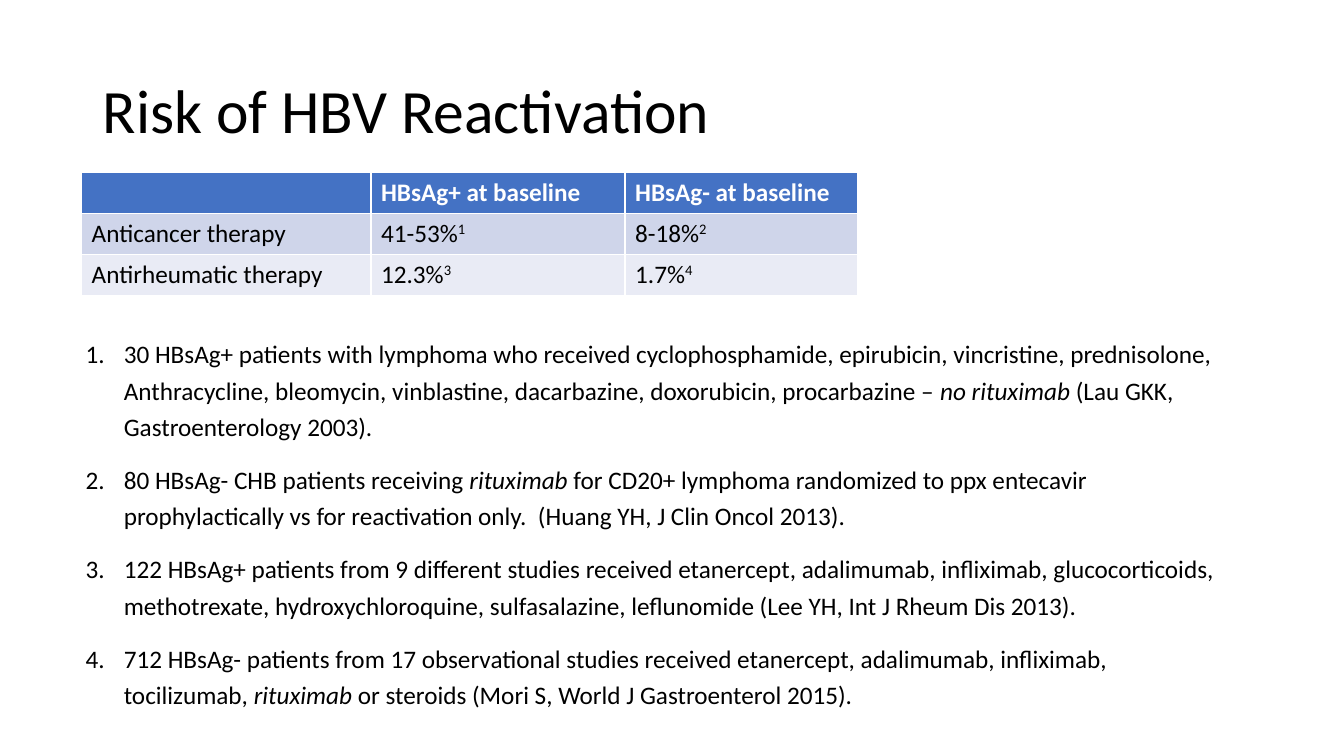
from lxml.etree import SubElement as Sub
from pptx import Presentation as Deck
from pptx.dml.color import RGBColor as Rgb
from pptx.enum.text import MSO_ANCHOR as Anchor
from pptx.oxml.ns import qn
from pptx.util import Inches, Pt

HUES = {"ink": "000000", "white": "FFFFFF", "head": "4472C4",
        "dark": "CFD5EA", "light": "E9EBF5"}
FONT = "Calibri"
ROWS = [
    ("head", ["", "HBsAg+ at baseline", "HBsAg- at baseline"]),
    ("dark", ["Anticancer therapy", "41-53%^1", "8-18%^2"]),
    ("light", ["Antirheumatic therapy", "12.3%^3", "1.7%^4"]),
]
WIDTHS = [2.87, 2.52, 2.31]
NOTES = [
    "30 HBsAg+ patients with lymphoma who received cyclophosphamide, "
    "epirubicin, vincristine, prednisolone, Anthracycline, bleomycin, "
    "vinblastine, dacarbazine, doxorubicin, procarbazine – *no rituximab *"
    "(Lau GKK, Gastroenterology 2003).",
    "80 HBsAg- CHB patients receiving *rituximab* for CD20+ lymphoma "
    "randomized to ppx entecavir prophylactically vs for reactivation only.  "
    "(Huang YH, J Clin Oncol 2013).",
    "122 HBsAg+ patients from 9 different studies received etanercept, "
    "adalimumab, infliximab, glucocorticoids, methotrexate, "
    "hydroxychloroquine, sulfasalazine, leflunomide "
    "(Lee YH, Int J Rheum Dis 2013).",
    "712 HBsAg- patients from 17 observational studies received etanercept, "
    "adalimumab, infliximab, tocilizumab, *rituximab* or steroids "
    "(Mori S, World J Gastroenterol 2015).",
]


def write(para, text, size=18, hue="ink", bold=False, mark="*", line=1.0, gap=0):
    para.line_spacing = line
    para.space_before = para.space_after = Pt(gap)
    for i, part in enumerate(text.split(mark)):
        if not part:
            continue
        run = para.add_run()
        run.text = part
        font = run.font
        font.name, font.size, font.bold = FONT, Pt(size), bold
        font.color.rgb = Rgb.from_string(HUES[hue])
        if i % 2 and mark == "*":
            font.italic = True
        elif i % 2:
            run._r.get_or_add_rPr().set("baseline", "30000")


def number(para):
    props = para._p.get_or_add_pPr()
    props.set("marL", str(Inches(0.38)))
    props.set("indent", str(Inches(-0.38)))
    Sub(props, qn("a:buFont"), typeface=FONT)
    Sub(props, qn("a:buAutoNum"), type="arabicPeriod")


def add_box(slide, left, top, width, height, anchor=Anchor.TOP):
    box = slide.shapes.add_textbox(
        Inches(left), Inches(top), Inches(width), Inches(height))
    frame = box.text_frame
    frame.word_wrap = True
    frame.vertical_anchor = anchor
    return frame


def add_title(slide, text):
    frame = add_box(slide, 0.92, 0.4, 11.5, 1.45, Anchor.MIDDLE)
    write(frame.paragraphs[0], text, size=44, line=0.9)


def add_rates(slide):
    table = slide.shapes.add_table(
        len(ROWS), len(WIDTHS), Inches(0.81), Inches(1.71),
        Inches(sum(WIDTHS)), Inches(1.22)).table
    for col, width in zip(table.columns, WIDTHS):
        col.width = Inches(width)
    for r, (fill, texts) in enumerate(ROWS):
        head = fill == "head"
        for c, text in enumerate(texts):
            cell = table.cell(r, c)
            cell.fill.solid()
            cell.fill.fore_color.rgb = Rgb.from_string(HUES[fill])
            write(cell.text_frame.paragraphs[0], text, mark="^",
                  hue="white" if head else "ink", bold=head)


def add_notes(slide):
    frame = add_box(slide, 0.75, 3.25, 11.5, 3.85)
    for i, text in enumerate(NOTES):
        para = frame.add_paragraph() if i else frame.paragraphs[0]
        write(para, text, line=1.2, gap=6)
        number(para)


def main():
    deck = Deck()
    deck.slide_width, deck.slide_height = Inches(13.33), Inches(7.5)
    slide = deck.slides.add_slide(deck.slide_layouts[6])
    add_title(slide, "Risk of HBV Reactivation")
    add_rates(slide)
    add_notes(slide)
    deck.save("out.pptx")


if __name__ == "__main__":
    main()
